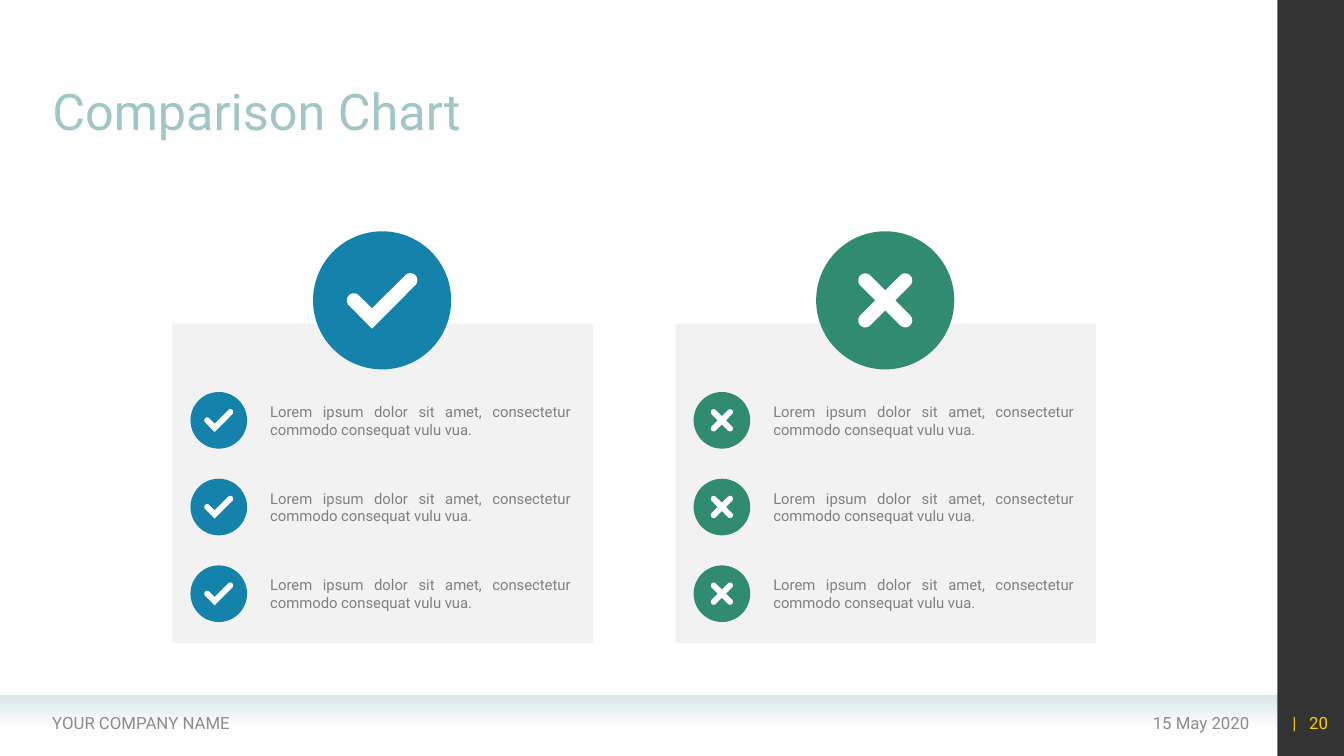
"""Builds a comparison slide with a ticked panel beside a crossed panel."""
import math

import pptx
import pptx.util
import pptx.dml.color
import pptx.enum.shapes
import pptx.enum.text
import pptx.oxml
import pptx.oxml.ns

Inches = pptx.util.Inches
RGBColor = pptx.dml.color.RGBColor
SHAPE = pptx.enum.shapes.MSO_SHAPE
ALIGN = pptx.enum.text.PP_ALIGN
ANCHOR = pptx.enum.text.MSO_ANCHOR

WHITE = RGBColor(0xFF, 0xFF, 0xFF)
BLACK = RGBColor(0x00, 0x00, 0x00)
MIST = RGBColor(0xD9, 0xE9, 0xE8)
TEAL = RGBColor(0xA0, 0xC7, 0xC5)
PANEL_GRAY = RGBColor(0xF2, 0xF2, 0xF2)
BODY_GRAY = RGBColor(0x80, 0x80, 0x80)
FOOTER_GRAY = RGBColor(0x8C, 0x8C, 0x8C)
YELLOW = RGBColor(0xFF, 0xCC, 0x00)
BLUE = RGBColor(0x14, 0x82, 0xAB)
GREEN = RGBColor(0x31, 0x8B, 0x71)

deck = pptx.Presentation()
deck.slide_width = Inches(13.33)
deck.slide_height = Inches(7.5)
slide = deck.slides.add_slide(deck.slide_layouts[6])


def paint(shape, color, alpha=None):
    shape.shadow.inherit = False
    shape.line.fill.background()
    shape.fill.solid()
    shape.fill.fore_color.rgb = color
    if alpha is not None:
        tone = next(shape.element.iter(pptx.oxml.ns.qn("a:srgbClr")))
        tone.append(pptx.oxml.parse_xml(
            f'<a:alpha {pptx.oxml.ns.nsdecls("a")} val="{alpha * 1000}"/>'))


def add_text(*runs, box, size=12, color=FOOTER_GRAY, align=ALIGN.LEFT,
             anchor=ANCHOR.MIDDLE, margins=(0.1, 0.05), line_spacing=None):
    frame = slide.shapes.add_textbox(*map(Inches, box)).text_frame
    frame.word_wrap = True
    frame.vertical_anchor = anchor
    frame.margin_left = frame.margin_right = Inches(margins[0])
    frame.margin_top = frame.margin_bottom = Inches(margins[1])
    paragraph = frame.paragraphs[0]
    paragraph.alignment = align
    paragraph.line_spacing = line_spacing
    for text in runs:
        run = paragraph.add_run()
        run.text = text
        run.font.name = "Roboto"
        run.font.size = pptx.util.Pt(size)
        run.font.color.rgb = color
    return paragraph


footer_band = slide.shapes.add_shape(
    SHAPE.RECTANGLE, Inches(0), Inches(6.9), Inches(12.67), Inches(0.31))
paint(footer_band, MIST)
footer_band.fill.gradient()
footer_band.fill.gradient_angle = 270
for stop in footer_band.fill.gradient_stops:
    stop.color.rgb = MIST
fading_tone = list(footer_band.element.iter(pptx.oxml.ns.qn("a:srgbClr")))[-1]
fading_tone.append(pptx.oxml.parse_xml(
    f'<a:alpha {pptx.oxml.ns.nsdecls("a")} val="0"/>'))

side_bar = slide.shapes.add_shape(
    SHAPE.RECTANGLE, Inches(12.67), Inches(0), Inches(0.67), Inches(7.5))
paint(side_bar, BLACK, alpha=80)

add_text("15 May 2020", box=(9.1, 6.97, 3.39, 0.4), align=ALIGN.RIGHT)
add_text("YOUR COMPANY NAME", box=(0.42, 6.97, 4.9, 0.4))
page_number = add_text("| ", "20", box=(12.6, 6.97, 0.67, 0.4),
                       color=YELLOW, align=ALIGN.RIGHT)
page_number.runs[0].font._element.set("spc", "300")
add_text("Comparison Chart", box=(0.42, 0.2, 11.21, 1.25), size=36,
         color=TEAL, anchor=ANCHOR.BOTTOM, line_spacing=0.9)

# Each corner is (x, y, start angle of a round cap or None), from the badge centre.
TICK = [(-0.1, 0.28, None), (-0.28, 0, 135), (-0.1, 0.08, None), (0.28, -0.2, 225)]
CROSS = []
for arm in range(4):
    angle = math.radians(225 + 90 * arm)
    CROSS.append((0.28 * math.cos(angle), 0.28 * math.sin(angle), 135 + 90 * arm))
    notch = angle + math.pi / 4
    CROSS.append((0.1 * math.cos(notch), 0.1 * math.sin(notch), None))

CAP_RADIUS = 0.07
BADGE_SIZE = 1.37
SMALL = 0.41
ROW_CENTERS = [4.17 + 0.86 * row for row in range(3)]

for panel_left, color, mark in [(1.71, BLUE, TICK), (6.7, GREEN, CROSS)]:
    panel = slide.shapes.add_shape(
        SHAPE.RECTANGLE, Inches(panel_left), Inches(3.21), Inches(4.17), Inches(3.17))
    paint(panel, PANEL_GRAY)

    badges = [(panel_left + 2.08, 2.98, 1)]
    badges += [(panel_left + 0.46, row_center, SMALL) for row_center in ROW_CENTERS]
    for center_x, center_y, scale in badges:
        size = BADGE_SIZE * scale
        disc = slide.shapes.add_shape(
            SHAPE.OVAL, Inches(center_x - size / 2), Inches(center_y - size / 2),
            Inches(size), Inches(size))
        paint(disc, color)

        outline = []
        for x, y, cap_start in mark:
            if cap_start is None:
                outline.append((x, y))
                continue
            for degrees in range(cap_start, cap_start + 181, 15):
                turn = math.radians(degrees)
                outline.append((x + CAP_RADIUS * math.cos(turn),
                                y + CAP_RADIUS * math.sin(turn)))
        points = [(Inches(center_x + x * scale), Inches(center_y + y * scale))
                  for x, y in outline]
        pen = slide.shapes.build_freeform(*points[0])
        pen.add_line_segments(points[1:], close=True)
        paint(pen.convert_to_shape(), WHITE)

    for row_center in ROW_CENTERS:
        add_text("Lorem ipsum dolor sit amet, consectetur commodo consequat vulu vua.",
                 box=(panel_left + 0.93, row_center - 0.2, 3.06, 0.4), size=10.6,
                 color=BODY_GRAY, align=ALIGN.JUSTIFY, margins=(0.04, 0.02))

deck.save("out.pptx")
